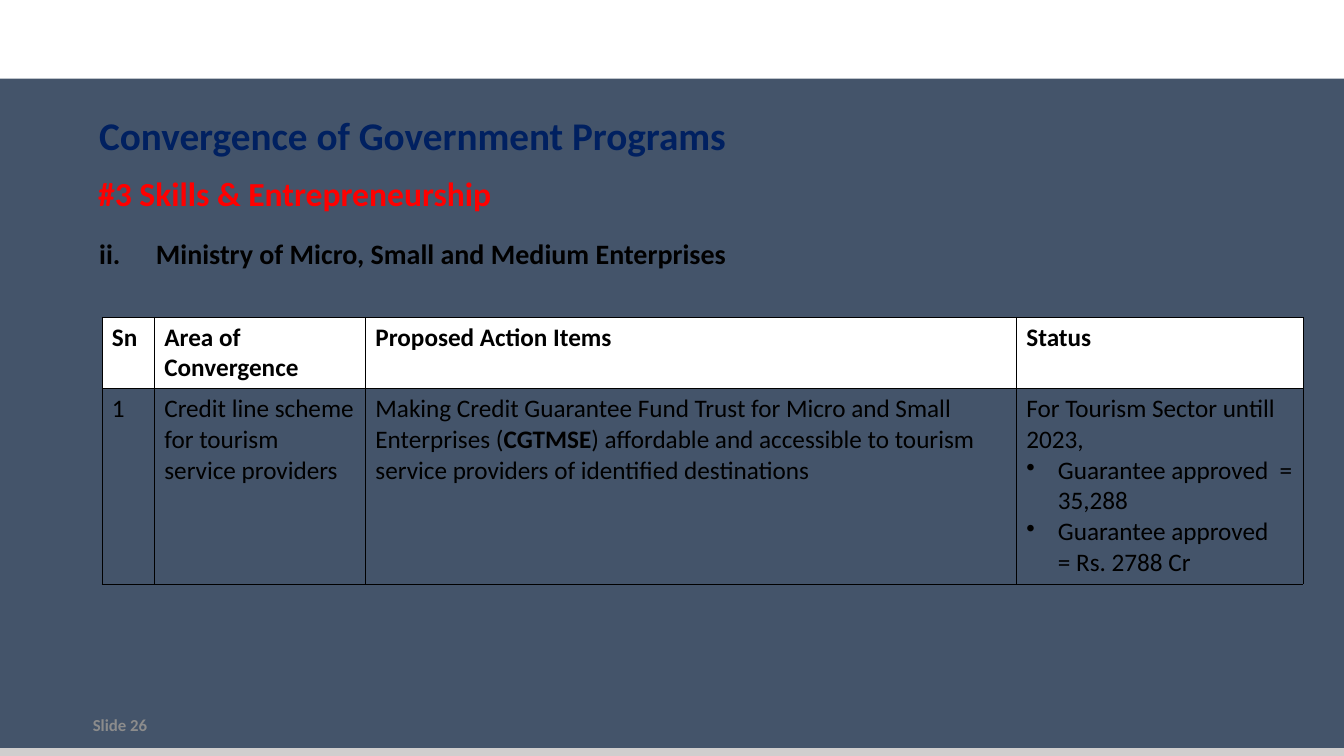
from dataclasses import dataclass

from lxml.etree import SubElement
from pptx import Presentation
from pptx.dml.color import RGBColor
from pptx.enum.shapes import MSO_CONNECTOR, MSO_SHAPE
from pptx.enum.text import MSO_ANCHOR
from pptx.oxml.ns import qn
from pptx.util import Emu, Pt

PX = 9525
WIDTH, HEIGHT = 1280, 720
SLATE = RGBColor(0x44, 0x54, 0x6A)
WHITE = RGBColor(0xFF, 0xFF, 0xFF)
BLACK = RGBColor(0, 0, 0)
SILVER = RGBColor(0xD0, 0xCE, 0xCE)
GREY = RGBColor(0x8C, 0x8C, 0x8C)
RED = RGBColor(0xFF, 0, 0)
NAVY = RGBColor(0, 0x20, 0x60)


@dataclass(frozen=True)
class Mark:
    tag: str
    attrs: dict[str, str]
    indent: int


@dataclass(frozen=True)
class Para:
    runs: tuple[tuple[str, bool], ...]
    mark: Mark | None = None


@dataclass(frozen=True)
class Label:
    box: tuple[int, int, int, int]
    para: Para
    size: int
    color: RGBColor
    anchor: MSO_ANCHOR = MSO_ANCHOR.MIDDLE


ROMAN = Mark("a:buAutoNum", {"type": "romanLcPeriod", "startAt": "2"}, 54)
DOT = Mark("a:buChar", {"char": "•"}, 30)


def plain(text: str, mark: Mark | None = None) -> Para:
    return Para(((text, False),), mark)


def bold(text: str, mark: Mark | None = None) -> Para:
    return Para(((text, True),), mark)


LABELS = (
    Label((79, 677, 288, 26), bold("Slide 26"), 12, GREY),
    Label((84, 158, 1133, 52), bold("#3 Skills & Entrepreneurship"), 24, RED),
    Label((85, 97, 799, 62), bold("Convergence of Government Programs"), 28, NAVY),
    Label((85, 221, 1133, 52),
          bold("Ministry of Micro, Small and Medium Enterprises", ROMAN),
          20, BLACK, MSO_ANCHOR.TOP),
)

COLS = (50, 201, 620, 273)
ROWS = (68, 186)
HEADS = ("Sn", "Area of Convergence", "Proposed Action Items", "Status")
ACTION = Para((
    ("Making Credit Guarantee Fund Trust for Micro and Small Enterprises (", False),
    ("CGTMSE", True),
    (") affordable and accessible to tourism service providers of "
     "identified destinations", False),
))
STATUS = (
    plain("For Tourism Sector untill 2023,"),
    plain("Guarantee approved  = 35,288", DOT),
    plain("Guarantee approved   = Rs. 2788 Cr", DOT),
)
CELLS = (
    tuple((bold(head),) for head in HEADS),
    ((plain("1"),),
     (plain("Credit line scheme for tourism service providers"),),
     (ACTION,),
     STATUS),
)


def px(*sizes: int) -> list[Emu]:
    return [Emu(size * PX) for size in sizes]


def write(frame, paras: tuple[Para, ...], size: int, color: RGBColor) -> None:
    for i, para in enumerate(paras):
        line = frame.paragraphs[0] if i == 0 else frame.add_paragraph()
        if para.mark:
            props = line._p.get_or_add_pPr()
            indent = para.mark.indent * PX
            props.set("marL", str(indent))
            props.set("indent", str(-indent))
            SubElement(props, qn(para.mark.tag), para.mark.attrs)
        for text, heavy in para.runs:
            run = line.add_run()
            run.text = text
            style = {"name": "Calibri", "size": Pt(size), "bold": heavy}
            for key, value in style.items():
                setattr(run.font, key, value)
            run.font.color.rgb = color


def draw_label(slide, label: Label) -> None:
    frame = slide.shapes.add_textbox(*px(*label.box)).text_frame
    frame.word_wrap = True
    frame.vertical_anchor = label.anchor
    write(frame, (label.para,), label.size, label.color)


def edge(cell) -> None:
    props = cell._tc.get_or_add_tcPr()
    for side in ("L", "R", "T", "B"):
        line = SubElement(props, qn(f"a:ln{side}"), {"w": str(Pt(0.25))})
        fill = SubElement(line, qn("a:solidFill"))
        SubElement(fill, qn("a:srgbClr"), {"val": str(BLACK)})


def draw_table(slide) -> None:
    area = px(97, 302, sum(COLS), sum(ROWS))
    table = slide.shapes.add_table(len(ROWS), len(COLS), *area).table
    table.first_row = table.horz_banding = False
    for col, width in zip(table.columns, px(*COLS)):
        col.width = width
    for row, height in zip(table.rows, px(*ROWS)):
        row.height = height
    for r, line in enumerate(CELLS):
        for c, paras in enumerate(line):
            cell = table.cell(r, c)
            edge(cell)
            if r == 0:
                cell.fill.solid()
                cell.fill.fore_color.rgb = WHITE
            else:
                cell.fill.background()
            write(cell.text_frame, paras, 18, BLACK)


def draw_frame(slide) -> None:
    back = slide.background.fill
    back.solid()
    back.fore_color.rgb = SLATE
    band = slide.shapes.add_shape(MSO_SHAPE.RECTANGLE, *px(0, 0, WIDTH, 75))
    band.shadow.inherit = False
    band.fill.solid()
    band.fill.fore_color.rgb = WHITE
    band.line.fill.background()
    rule = slide.shapes.add_connector(
        MSO_CONNECTOR.STRAIGHT, *px(0, 716, WIDTH, 716))
    rule.line.color.rgb = SILVER
    rule.line.width = Pt(6)
    SubElement(rule._element.spPr, qn("a:effectLst"))


def main() -> None:
    deck = Presentation()
    deck.slide_width, deck.slide_height = px(WIDTH, HEIGHT)
    slide = deck.slides.add_slide(deck.slide_layouts[6])
    draw_frame(slide)
    for label in LABELS:
        draw_label(slide, label)
    draw_table(slide)
    deck.save("out.pptx")


if __name__ == "__main__":
    main()
